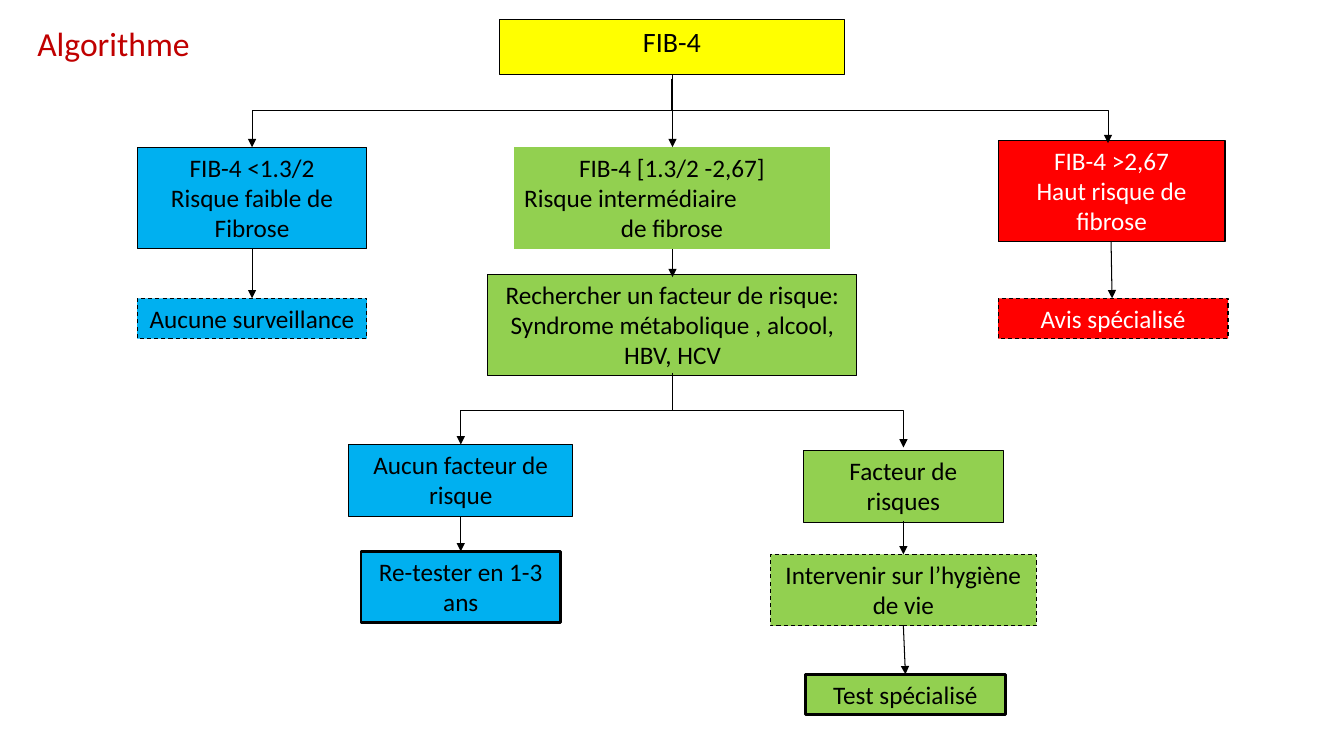
from dataclasses import dataclass

from lxml.etree import SubElement
from pptx import Presentation
from pptx.dml.color import RGBColor
from pptx.enum.dml import MSO_LINE_DASH_STYLE as Dash
from pptx.enum.shapes import MSO_CONNECTOR as Conn, MSO_SHAPE as Shape
from pptx.enum.text import MSO_ANCHOR as Anchor, MSO_AUTO_SIZE as AutoSize, PP_ALIGN as Align
from pptx.oxml.ns import qn
from pptx.util import Inches, Pt

BLACK, WHITE, TITLE_RED = "000000", "FFFFFF", "C00000"
BLUE, GREEN, RED, YELLOW = "00B0F0", "92D050", "FF0000", "FFFF00"
C, L = Align.CENTER, Align.LEFT


@dataclass
class Box:
    left: float
    top: float
    width: float
    height: float
    fill: str
    lines: list[str]
    color: str = BLACK
    line: str = BLACK
    weight: float = 0.75
    dashed: bool = False
    size: int = 18
    aligns: tuple = (C, C, C)


@dataclass
class Arrow:
    x1: float
    y1: float
    x2: float
    y2: float
    bent: bool = False


BOXES = [
    Box(4.95, 0.19, 3.43, 0.55, YELLOW, ["FIB-4"], size=20),
    Box(1.36, 1.46, 2.28, 1.01, BLUE, ["FIB-4 <1.3/2", "Risque faible de Fibrose"]),
    Box(5.1, 1.46, 3.13, 1.01, GREEN,
        ["FIB-4 [1.3/2 -2,67]", "Risque intermédiaire", "de fibrose"],
        line=GREEN, aligns=(C, L, C)),
    Box(9.9, 1.39, 2.25, 1.01, RED, ["FIB-4 >2,67", "Haut risque de fibrose"], WHITE),
    Box(1.36, 2.96, 2.28, 0.4, BLUE, ["Aucune surveillance"], dashed=True),
    Box(4.84, 2.72, 3.66, 1.01, GREEN,
        ["Rechercher un facteur de risque: Syndrome métabolique , alcool, HBV, HCV"]),
    Box(9.9, 2.96, 2.28, 0.4, RED, ["Avis spécialisé"], WHITE, dashed=True),
    Box(3.46, 4.41, 2.22, 0.71, BLUE, ["Aucun facteur de risque"]),
    Box(7.97, 4.47, 1.98, 0.71, GREEN, ["Facteur de risques"]),
    Box(3.58, 5.47, 1.98, 0.71, BLUE, ["Re-tester en 1-3 ans"], weight=2),
    Box(7.64, 5.5, 2.64, 0.71, GREEN, ["Intervenir sur l’hygiène de vie"], dashed=True),
    Box(7.99, 6.69, 1.98, 0.4, GREEN, ["Test spécialisé"], weight=2),
]

ARROWS = [
    Arrow(6.67, 0.74, 2.5, 1.46, bent=True),
    Arrow(6.67, 0.74, 6.67, 1.46),
    Arrow(6.66, 0.78, 10.99, 1.42, bent=True),
    Arrow(2.5, 2.47, 2.5, 2.96),
    Arrow(6.67, 2.47, 6.67, 2.75),
    Arrow(11.02, 2.4, 11.03, 2.96),
    Arrow(6.67, 3.73, 4.57, 4.41, bent=True),
    Arrow(6.67, 3.7, 8.96, 4.44, bent=True),
    Arrow(4.57, 5.12, 4.57, 5.47),
    Arrow(8.96, 5.17, 8.96, 5.5),
    Arrow(8.96, 6.21, 8.98, 6.69),
]


def rgb(color: str) -> RGBColor:
    return RGBColor.from_string(color)


def write(tf, lines: list[str], *, size: int, color: str, aligns: tuple) -> None:
    tf.word_wrap = True
    tf.auto_size = AutoSize.NONE
    tf.vertical_anchor = Anchor.TOP
    for i, (text, align) in enumerate(zip(lines, aligns)):
        p = tf.add_paragraph() if i else tf.paragraphs[0]
        p.alignment = align
        p.line_spacing = 1.0
        r = p.add_run()
        r.text = text
        r.font.name = "Calibri"
        r.font.size = Pt(size)
        r.font.color.rgb = rgb(color)


def add_title(s, text: str) -> None:
    title = s.shapes.title
    title.left, title.top = Inches(0.27), Inches(0.18)
    title.width, title.height = Inches(2.28), Inches(0.5)
    write(title.text_frame, [text], size=24, color=TITLE_RED, aligns=(L,))


def add_box(s, box: Box) -> None:
    sp = s.shapes.add_shape(Shape.RECTANGLE, Inches(box.left), Inches(box.top),
                            Inches(box.width), Inches(box.height))
    sp.shadow.inherit = False
    sp.fill.solid()
    sp.fill.fore_color.rgb = rgb(box.fill)
    sp.line.color.rgb = rgb(box.line)
    sp.line.width = Pt(box.weight)
    if box.dashed:
        sp.line.dash_style = Dash.DASH
    write(sp.text_frame, box.lines, size=box.size, color=box.color, aligns=box.aligns)


def add_arrow(s, a: Arrow) -> None:
    """Draw a straight arrow, or a bent one that leaves and arrives vertically."""
    ends = (a.x1, a.y1, a.x2, a.y2)
    rightward = a.x2 > a.x1
    if a.bent:
        # An elbow runs horizontally first, so lay it on its side and turn it.
        cx, cy = (a.x1 + a.x2) / 2, (a.y1 + a.y2) / 2
        half_w, half_h = (a.y2 - a.y1) / 2, abs(a.x2 - a.x1) / 2
        if rightward:
            half_w = -half_w
        ends = (cx - half_w, cy - half_h, cx + half_w, cy + half_h)
    kind = Conn.ELBOW if a.bent else Conn.STRAIGHT
    cn = s.shapes.add_connector(kind, *map(Inches, ends))
    sp_pr = cn._element.spPr
    if a.bent:
        degrees = 270 if rightward else 90
        sp_pr.find(qn("a:xfrm")).set("rot", str(degrees * 60000))
    cn.line.color.rgb = rgb(BLACK)
    cn.line.width = Pt(0.75)
    SubElement(sp_pr.find(qn("a:ln")), qn("a:tailEnd"), type="triangle")
    SubElement(sp_pr, qn("a:effectLst"))


def main() -> None:
    prs = Presentation()
    prs.slide_width, prs.slide_height = Inches(13.33), Inches(7.5)
    s = prs.slides.add_slide(prs.slide_layouts[5])
    add_title(s, "Algorithme")
    for box in BOXES:
        add_box(s, box)
    for arrow in ARROWS:
        add_arrow(s, arrow)
    prs.save("out.pptx")


if __name__ == "__main__":
    main()
